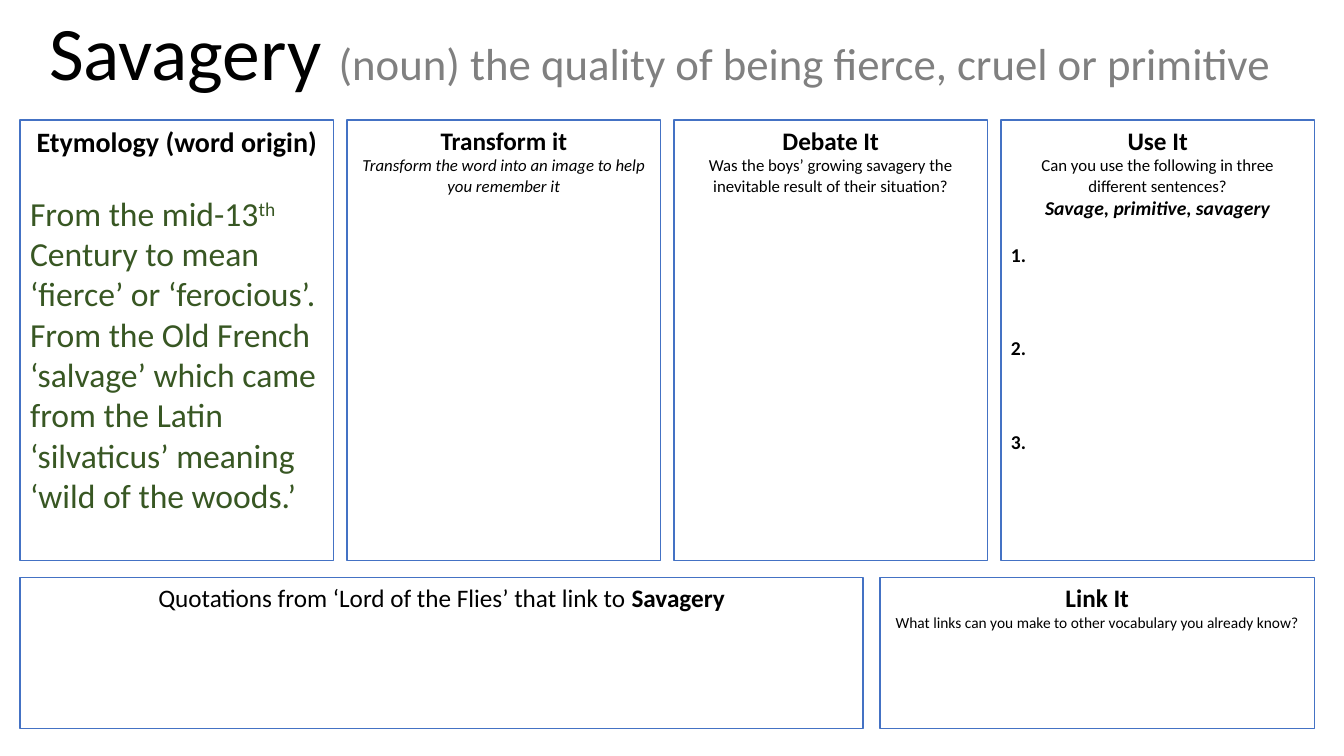
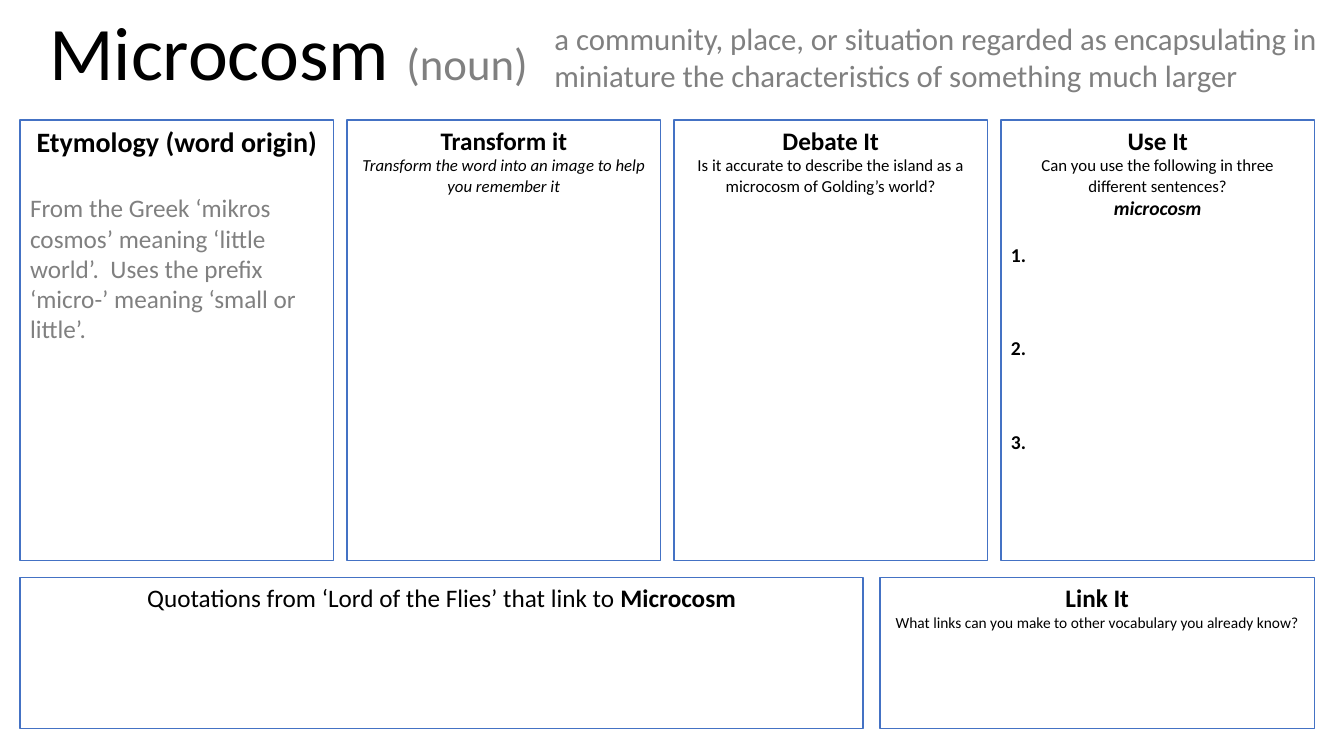
from pptx import Presentation
from pptx.dml.color import RGBColor
from pptx.enum.shapes import MSO_SHAPE as Shape
from pptx.enum.text import MSO_ANCHOR as Anchor, MSO_AUTO_SIZE as AutoSize, PP_ALIGN as Align
from pptx.util import Pt

FONT = "Calibri"
BLACK = RGBColor(0x00, 0x00, 0x00)
WHITE = RGBColor(0xFF, 0xFF, 0xFF)
GRAY = RGBColor(0x80, 0x80, 0x80)
GREEN = RGBColor(0x38, 0x57, 0x23)
BLUE = RGBColor(0x44, 0x72, 0xC4)

# Layout grid, in points
LEFT, RIGHT = 14.4, 938.9
PANEL_TOP, PANEL_HEIGHT = 85.7, 314.6
PANEL_GAP = 9.6
PANEL_WIDTH = (RIGHT - LEFT - 3 * PANEL_GAP) / 4
BOTTOM_TOP, BOTTOM_HEIGHT = 412.6, 108
QUOTE_WIDTH, LINK_WIDTH = 602, 310.3

# Words: a run is (text, size, colour, style); style holds b, i or ^ (superscript)
WORDS = [
    {
        "word": "Savagery",
        "title_width": 904.3,
        "meaning": "(noun) the quality of being fierce, cruel or primitive",
        "definition": None,
        "etymology": [
            [("From the mid-13", 24, GREEN, ""), ("th", 24, GREEN, "^"),
             (" Century to mean ‘fierce’ or ‘ferocious’.", 24, GREEN, "")],
            [("From the Old French ‘salvage’ which came from the Latin "
              "‘silvaticus’ meaning ‘wild of the woods.’", 24, GREEN, "")],
        ],
        "debate": "Was the boys’ growing savagery the inevitable result of their situation?",
        "use": "Savage, primitive, savagery",
    },
    {
        "word": "Microcosm",
        "title_width": 358,
        "meaning": "(noun)",
        "definition": "a community, place, or situation regarded as encapsulating in "
                      "miniature the characteristics of something much larger",
        "etymology": [
            [("From the Greek ‘mikros cosmos’ meaning ‘little world’.  Uses the prefix "
              "‘micro-’ meaning ‘small or little’.", 18, GRAY, "")],
        ],
        "debate": "Is it accurate to describe the island as a microcosm of Golding’s world?",
        "use": "microcosm",
    },
]


def write(shape, paragraphs):
    """Fill a shape with paragraphs given as (alignment, space before, runs)."""
    frame = shape.text_frame
    frame.word_wrap = True
    frame.vertical_anchor = Anchor.TOP
    for index, (alignment, space, runs) in enumerate(paragraphs):
        para = frame.add_paragraph() if index else frame.paragraphs[0]
        para.alignment = alignment
        para.space_before = Pt(space)
        for text, size, color, style in runs:
            span = para.add_run()
            span.text = text
            span.font.name = FONT
            span.font.size = Pt(size)
            span.font.color.rgb = color
            span.font.bold = "b" in style
            span.font.italic = "i" in style
            if "^" in style:
                span.font._element.set("baseline", "30000")


def add_text(page, left, top, width, height, runs):
    box = page.shapes.add_textbox(Pt(left), Pt(top), Pt(width), Pt(height))
    write(box, [(Align.LEFT, 0, runs)])
    box.text_frame.auto_size = AutoSize.SHAPE_TO_FIT_TEXT


deck = Presentation()
deck.slide_width, deck.slide_height = Pt(960), Pt(540)

for entry in WORDS:
    page = deck.slides.add_slide(deck.slide_layouts[6])
    word = entry["word"]

    # Title and definition
    add_text(page, 28, 0, entry["title_width"], 73,
             [(word + " ", 54, BLACK, ""), (entry["meaning"], 32, GRAY, "")])
    if entry["definition"]:
        add_text(page, 389, 10.8, 571, 60.5, [(entry["definition"], 22, GRAY, "")])

    # Panel contents
    etymology = [(Align.CENTER, 0, [("Etymology (word origin)", 20, BLACK, "b")])]
    for index, runs in enumerate(entry["etymology"]):
        etymology.append((Align.LEFT, 0 if index else 24.4, runs))
    transform = [
        (Align.CENTER, 0, [("Transform it", 18, BLACK, "b")]),
        (Align.CENTER, 0, [("Transform the word into an image to help you remember it",
                            12, BLACK, "i")]),
    ]
    debate = [
        (Align.CENTER, 0, [("Debate It", 18, BLACK, "b")]),
        (Align.CENTER, 0, [(entry["debate"], 12, BLACK, "")]),
    ]
    use = [
        (Align.CENTER, 0, [("Use It", 18, BLACK, "b")]),
        (Align.CENTER, 0, [("Can you use the following in three different sentences?",
                            12, BLACK, "")]),
        (Align.CENTER, 0, [(entry["use"], 14, BLACK, "bi")]),
    ]
    for number, space in ((1, 16.8), (2, 50.2), (3, 50.2)):
        use.append((Align.LEFT, space, [(f"{number}.", 14, BLACK, "b")]))
    quotations = [
        (Align.CENTER, 0, [("Quotations from ‘Lord of the Flies’ that link to ", 18, BLACK, ""),
                           (word, 18, BLACK, "b")]),
    ]
    links = [
        (Align.CENTER, 0, [("Link It", 18, BLACK, "b")]),
        (Align.CENTER, 0, [("What links can you make to other vocabulary you already know?",
                            11, BLACK, "")]),
    ]

    # Four columns above, two panels below
    panels = [
        (LEFT + column * (PANEL_WIDTH + PANEL_GAP), PANEL_TOP, PANEL_WIDTH, PANEL_HEIGHT, content)
        for column, content in enumerate((etymology, transform, debate, use))
    ]
    panels.append((LEFT, BOTTOM_TOP, QUOTE_WIDTH, BOTTOM_HEIGHT, quotations))
    panels.append((RIGHT - LINK_WIDTH, BOTTOM_TOP, LINK_WIDTH, BOTTOM_HEIGHT, links))
    for left, top, width, height, content in panels:
        panel = page.shapes.add_shape(Shape.RECTANGLE, Pt(left), Pt(top), Pt(width), Pt(height))
        panel.shadow.inherit = False
        panel.fill.solid()
        panel.fill.fore_color.rgb = WHITE
        panel.line.color.rgb = BLUE
        panel.line.width = Pt(1)
        write(panel, content)

deck.save("out.pptx")
